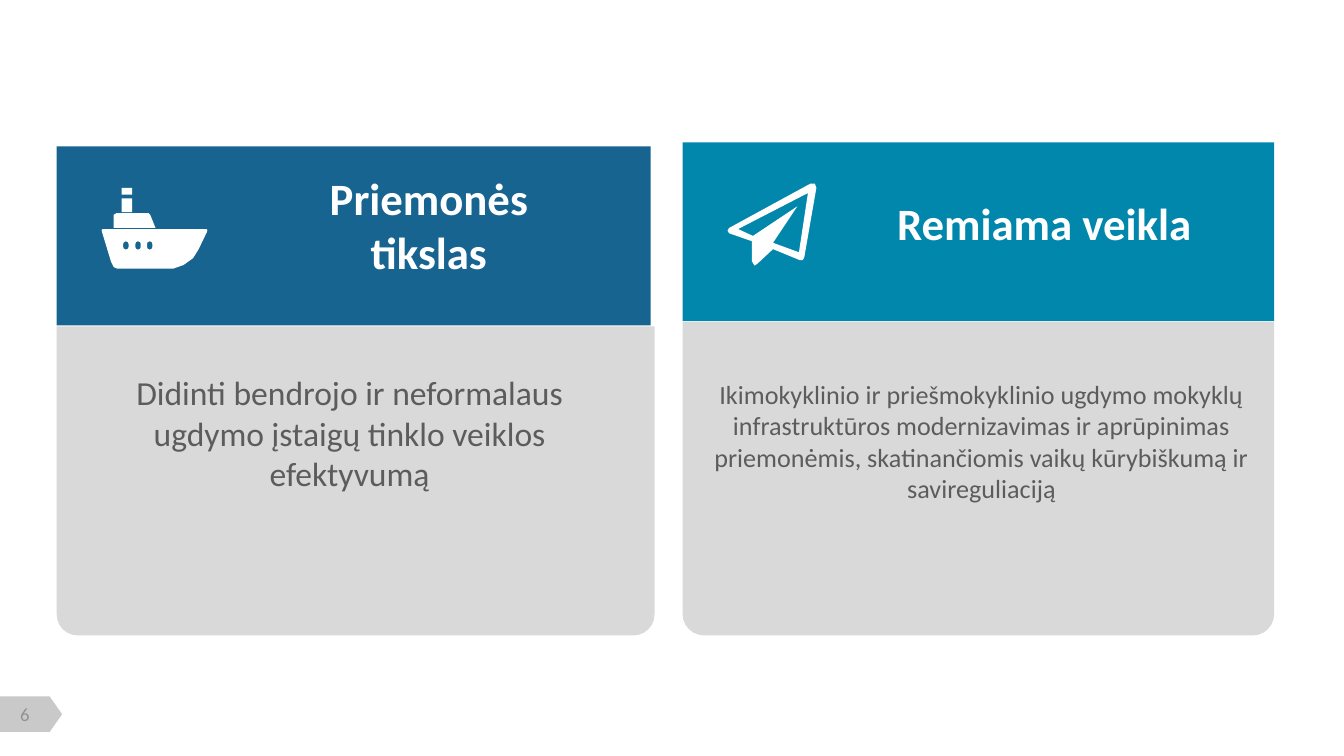
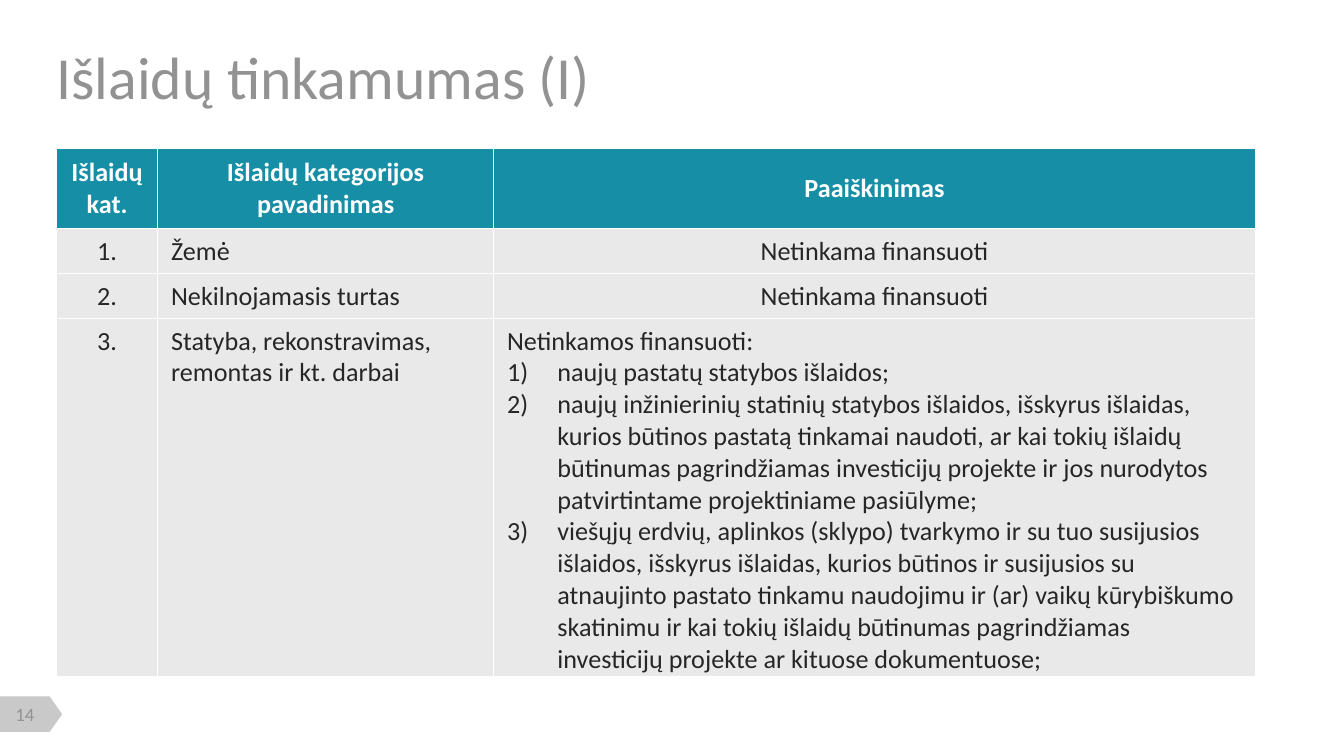
import math

import lxml.etree
import pptx
import pptx.dml.color
import pptx.enum.shapes
import pptx.enum.text
import pptx.oxml.ns
import pptx.util

Cm, Pt = pptx.util.Cm, pptx.util.Pt
qn = pptx.oxml.ns.qn
SHAPE = pptx.enum.shapes.MSO_SHAPE
ALIGN = pptx.enum.text.PP_ALIGN
ANCHOR = pptx.enum.text.MSO_ANCHOR
FIT = pptx.enum.text.MSO_AUTO_SIZE

COLORS = {
    "navy": "176490", "blue": "0187AC", "teal": "168EA6", "white": "FFFFFF",
    "panel": "D9D9D9", "cell": "E9E9E9", "tag": "C9C9C9",
    "muted": "929292", "body": "5C5C5C", "ink": "262626",
}

FORMATS = {
    "title": {"size": Pt(32), "bold": False, "color": "muted"},
    "number": {"size": Pt(10), "bold": False, "color": "muted"},
    "heading": {"size": Pt(24), "bold": True, "color": "white"},
    "goal": {"size": Pt(18), "bold": False, "color": "body"},
    "activity": {"size": Pt(14), "bold": False, "color": "body"},
    "header": {"size": Pt(14), "bold": True, "color": "white"},
    "cell": {"size": Pt(14), "bold": False, "color": "ink"},
}

PORTHOLES = [
    [(x + 5 * math.cos(k * math.pi / 8), 109 + 8 * math.sin(k * math.pi / 8))
     for k in range(16)]
    for x in (46, 69, 91)
]
SHIP = [
    [(2, 78), (198, 78), (200, 80), (199, 84), (183, 117), (173, 133), (155, 146),
     (135, 153), (30, 153), (23, 150), (18, 140), (1, 84), (0, 80)],
    [(23, 76), (23, 51), (28, 48), (89, 48), (92, 51), (102, 76)],
    [(38, 20), (58, 20), (58, 46), (38, 46)],
    [(38, 0), (58, 0), (58, 13), (38, 13)],
    *PORTHOLES,
]
PLANE = [
    [(168, 8), (145, 140), (142, 145), (137, 145), (86, 124), (56, 152), (51, 155),
     (46, 147), (46, 109), (3, 94), (0, 89), (3, 84), (157, 0), (165, 0)],
    [(152, 18), (20, 86), (48, 99), (132, 43), (86, 112), (135, 130)],
]

CARDS = [
    {"box": (1.07, 2.77, 11.23, 3.38), "fill": "navy", "icon": SHIP,
     "heading": "Priemonės tikslas", "heading_box": (3.86, 0.33, 6.35, 2.31),
     "panel_box": (0, 3.4, 11.3, 5.84), "body_box": (0.84, 4.14, 9.4, 3.43),
     "style": "goal",
     "body": "Didinti bendrojo ir neformalaus ugdymo įstaigų tinklo veiklos "
             "efektyvumą"},
    {"box": (12.9, 2.69, 11.18, 3.38), "fill": "blue", "icon": PLANE,
     "heading": "Remiama veikla", "heading_box": (3.66, 0.89, 6.35, 1.27),
     "panel_box": (0, 3.4, 11.18, 5.92), "body_box": (0.1, 4.34, 11.1, 2.64),
     "style": "activity",
     "body": "Ikimokyklinio ir priešmokyklinio ugdymo mokyklų infrastruktūros "
             "modernizavimas ir aprūpinimas priemonėmis, skatinančiomis vaikų "
             "kūrybiškumą ir savireguliaciją"},
]

EXPENSES = [
    ("Išlaidų kat.", "Išlaidų kategorijos pavadinimas", "Paaiškinimas"),
    ("1.", "Žemė", "Netinkama finansuoti"),
    ("2.", "Nekilnojamasis turtas", "Netinkama finansuoti"),
    ("3.", "Statyba, rekonstravimas, remontas ir kt. darbai",
     "Netinkamos finansuoti:"),
]
EXCLUDED = [
    "naujų pastatų statybos išlaidos;",
    "naujų inžinierinių statinių statybos išlaidos, išskyrus išlaidas, kurios "
    "būtinos pastatą tinkamai naudoti, ar kai tokių išlaidų būtinumas "
    "pagrindžiamas investicijų projekte ir jos nurodytos patvirtintame "
    "projektiniame pasiūlyme;",
    "viešųjų erdvių, aplinkos (sklypo) tvarkymo ir su tuo susijusios išlaidos, "
    "išskyrus išlaidas, kurios būtinos ir susijusios su atnaujinto pastato tinkamu "
    "naudojimu ir (ar) vaikų kūrybiškumo skatinimu ir kai tokių išlaidų būtinumas "
    "pagrindžiamas investicijų projekte ar kituose dokumentuose;",
]


def rgb(name):
    """Return the named colour."""
    return pptx.dml.color.RGBColor.from_string(COLORS[name])


def paint(shape, color):
    """Give a shape a flat fill without line or shadow."""
    shape.shadow.inherit = False
    shape.fill.solid()
    shape.fill.fore_color.rgb = rgb(color)
    shape.line.fill.background()


def inside(box, part):
    """Return a part's lengths, moved by the corner of its box."""
    x, y, w, h = part
    return Cm(box[0] + x), Cm(box[1] + y), Cm(w), Cm(h)


def write(p, text, style, align=ALIGN.LEFT):
    """Write one styled run into a paragraph."""
    p.alignment = align
    r = p.add_run()
    r.text = text
    r.font.name = "Calibri"
    for key, value in FORMATS[style].items():
        if key == "color":
            r.font.color.rgb = rgb(value)
        else:
            setattr(r.font, key, value)


def add_text(shapes, lengths, text, style, **frame):
    """Add a centred, wrapping text box."""
    tf = shapes.add_textbox(*lengths).text_frame
    values = {"word_wrap": True, "auto_size": FIT.SHAPE_TO_FIT_TEXT, **frame}
    for key, value in values.items():
        setattr(tf, key, value)
    write(tf.paragraphs[0], text, style, ALIGN.CENTER)


def add_icon(s, x, y, outlines):
    """Draw white outlines, measured in hundredths of a centimetre."""
    builder = None
    for start, *rest in outlines:
        if builder is None:
            builder = s.shapes.build_freeform(*start, scale=Cm(0.01))
        else:
            builder.move_to(*start)
        builder.add_line_segments(rest, close=True)
    paint(builder.convert_to_shape(Cm(x), Cm(y)), "white")


def add_number(s, number, box=(0, 13.17)):
    """Add the page number on its arrow tag."""
    sp = s.shapes.add_shape(SHAPE.FLOWCHART_OFFPAGE_CONNECTOR,
                            *inside(box, (0.25, -0.26, 0.67, 1.18)))
    sp.rotation = 270
    paint(sp, "tag")
    margins = {f"margin_{side}": 0 for side in ("left", "top", "right", "bottom")}
    add_text(s.shapes, inside(box, (0.05, 0.12, 0.84, 0.43)), str(number), "number",
             vertical_anchor=ANCHOR.MIDDLE, **margins)


def add_card(s, card):
    """Add a coloured heading with its icon above a grey panel."""
    box = card["box"]
    head = s.shapes.add_shape(SHAPE.RECTANGLE, *inside(box, (0, 0, *box[2:])))
    paint(head, card["fill"])
    add_icon(s, box[0] + 0.85, box[1] + 0.78, card["icon"])
    add_text(s.shapes, inside(box, card["heading_box"]), card["heading"], "heading")
    group = s.shapes.add_group_shape()
    panel = group.shapes.add_shape(SHAPE.ROUND_2_SAME_RECTANGLE,
                                   *inside(box, card["panel_box"]))
    panel.adjustments[0] = 0.068
    panel.rotation = 180
    paint(panel, "panel")
    add_text(group.shapes, inside(box, card["body_box"]), card["body"], card["style"])


def format_cell(cell, color):
    """Fill a cell and draw thin white borders."""
    cell.fill.solid()
    cell.fill.fore_color.rgb = rgb(color)
    tcPr = cell._tc.get_or_add_tcPr()
    for i, side in enumerate(("a:lnL", "a:lnR", "a:lnT", "a:lnB")):
        ln = lxml.etree.Element(qn(side), w=str(Pt(1)))
        fill = lxml.etree.SubElement(ln, qn("a:solidFill"))
        lxml.etree.SubElement(fill, qn("a:srgbClr"), val=COLORS["white"])
        tcPr.insert(i, ln)


def add_numbered(tf, items):
    """Append numbered paragraphs with a hanging indent."""
    for item in items:
        p = tf.add_paragraph()
        pPr = p._p.get_or_add_pPr()
        pPr.set("marL", str(Cm(0.95)))
        pPr.set("indent", str(-Cm(0.95)))
        lxml.etree.SubElement(pPr, qn("a:buFont"), typeface="+mj-lt")
        lxml.etree.SubElement(pPr, qn("a:buAutoNum"), type="arabicParenR")
        write(p, item, "cell")


def add_expenses(s, box):
    """Add the table of expense categories."""
    frame = s.shapes.add_table(len(EXPENSES), 3, *inside(box, (0, 0, *box[2:])))
    table = frame.table
    for column, width in zip(table.columns, (1.91, 6.35, 14.4)):
        column.width = Cm(width)
    for row, height in zip(table.rows, (1.52, 0.85, 0.85, 6.76)):
        row.height = Cm(height)
    for i, texts in enumerate(EXPENSES):
        for j, text in enumerate(texts):
            cell = table.cell(i, j)
            header = i == 0
            left = not header and (j == 1 or (i, j) == (3, 2))
            cell.vertical_anchor = ANCHOR.MIDDLE if header else ANCHOR.TOP
            write(cell.text_frame.paragraphs[0], text,
                  "header" if header else "cell",
                  ALIGN.LEFT if left else ALIGN.CENTER)
            format_cell(cell, "teal" if header else "cell")
    add_numbered(table.cell(3, 2).text_frame, EXCLUDED)


def add_title(s, text, box):
    """Place and format the title placeholder."""
    sp = s.shapes.title
    sp.left, sp.top, sp.width, sp.height = inside(box, (0, 0, *box[2:]))
    tf = sp.text_frame
    values = {"margin_left": 0, "vertical_anchor": ANCHOR.MIDDLE,
              "word_wrap": True, "auto_size": FIT.NONE}
    for key, value in values.items():
        setattr(tf, key, value)
    write(tf.paragraphs[0], text, "title")


def build_cards(prs):
    """Build the slide with the goal and the supported activity."""
    s = prs.slides.add_slide(prs.slide_layouts[6])
    add_number(s, 6)
    for card in CARDS:
        add_card(s, card)


def build_table(prs):
    """Build the slide on eligible expenses."""
    s = prs.slides.add_slide(prs.slide_layouts[5])
    add_number(s, 14)
    add_title(s, "Išlaidų tinkamumas (I)", (1.07, 0.94, 23.24, 0.99))
    add_expenses(s, (1.07, 2.8, 22.66, 9.98))


def main():
    """Build and save the presentation."""
    prs = pptx.Presentation()
    prs.slide_width, prs.slide_height = Cm(25.4), Cm(14.29)
    build_cards(prs)
    build_table(prs)
    prs.save("out.pptx")


if __name__ == "__main__":
    main()
